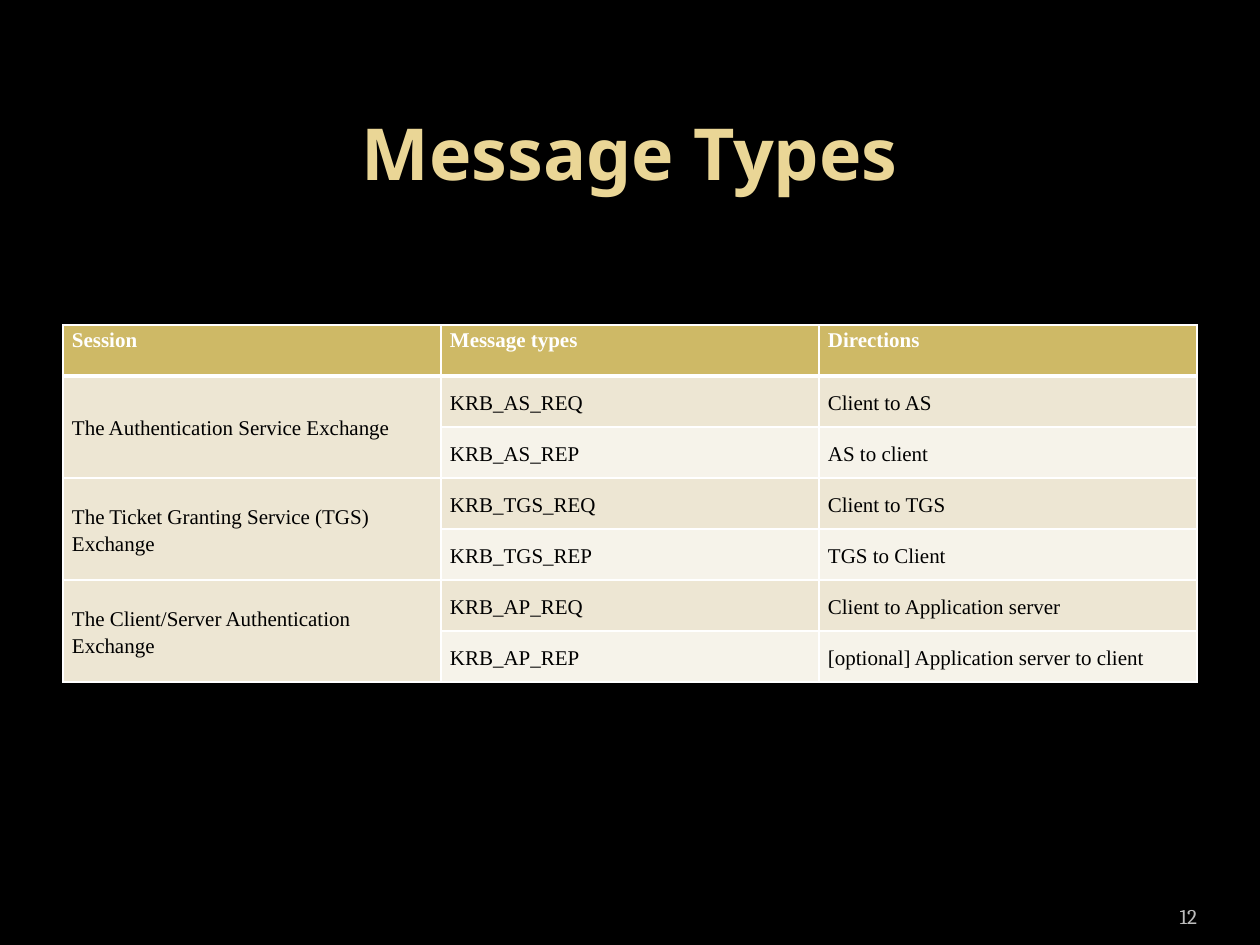
import pptx
import pptx.dml.color
import pptx.enum.text
import pptx.oxml.ns
import pptx.util
from lxml import etree

EMU_PER_PX = 914400 / 126
COLORS = {
    "background": "000000",
    "title": "EAD696",
    "header": "CEB966",
    "band_dark": "EDE6D3",
    "band_light": "F6F3EA",
    "white": "FFFFFF",
    "body": "000000",
    "number": "BDBDBD",
}
HEADERS = ["Session", "Message types", "Directions"]
SESSIONS = [
    ("The Authentication Service Exchange",
     [("KRB_AS_REQ", "Client to AS"), ("KRB_AS_REP", "AS to client")]),
    ("The Ticket Granting Service (TGS) Exchange",
     [("KRB_TGS_REQ", "Client to TGS"), ("KRB_TGS_REP", "TGS to Client")]),
    ("The Client/Server Authentication Exchange",
     [("KRB_AP_REQ", "Client to Application server"),
      ("KRB_AP_REP", "[optional] Application server to client")]),
]
ROW_HEIGHT = 51
COLUMN_WIDTH = 378
ALIGN = pptx.enum.text.PP_ALIGN
ANCHOR = pptx.enum.text.MSO_ANCHOR


def px(length):
    return pptx.util.Emu(round(length * EMU_PER_PX))


def rgb(name):
    return pptx.dml.color.RGBColor.from_string(COLORS[name])


def format_text(paragraph, font_name, size, color, bold=False, align=ALIGN.LEFT):
    paragraph.alignment = align
    for run in paragraph.runs:
        run.font.name = font_name
        run.font.size = pptx.util.Pt(size)
        run.font.bold = bold
        run.font.color.rgb = rgb(color)


def add_title(slide, text):
    title = slide.shapes.title
    title.left, title.top, title.width, title.height = px(63), px(73), px(1134), px(158)
    frame = title.text_frame
    frame.text = text
    frame.vertical_anchor = ANCHOR.MIDDLE
    format_text(frame.paragraphs[0], "Noto Sans", 41, "title", True, ALIGN.CENTER)


def set_borders(cell, widths):
    """Draw white borders; widths maps a side (L, R, T, B) to points."""
    properties = cell._tc.get_or_add_tcPr()
    for side, width in widths.items():
        line = etree.SubElement(properties, pptx.oxml.ns.qn(f"a:ln{side}"),
                                w=str(pptx.util.Pt(width)))
        fill = etree.SubElement(line, pptx.oxml.ns.qn("a:solidFill"))
        etree.SubElement(fill, pptx.oxml.ns.qn("a:srgbClr"), val=COLORS["white"])


def style_cell(cell, row):
    is_header = row == 0
    set_borders(cell, {"L": 1, "R": 1, "T": 3 if row == 1 else 1, "B": 3 if is_header else 1})
    band = "band_dark" if row % 2 else "band_light"
    cell.fill.solid()
    cell.fill.fore_color.rgb = rgb("header" if is_header else band)
    cell.margin_left = cell.margin_right = px(9)
    cell.margin_top = cell.margin_bottom = 0
    cell.vertical_anchor = ANCHOR.TOP if is_header else ANCHOR.MIDDLE
    paragraph = cell.text_frame.paragraphs[0]
    paragraph.line_spacing = 1.15
    format_text(paragraph, "Times New Roman", 12, "white" if is_header else "body", is_header)


def add_message_table(slide):
    rows = [HEADERS]
    for session, messages in SESSIONS:
        for index, message in enumerate(messages):
            rows.append(["" if index else session, *message])
    table = slide.shapes.add_table(
        len(rows), len(HEADERS), px(63), px(325),
        px(COLUMN_WIDTH * len(HEADERS)), px(ROW_HEIGHT * len(rows))).table
    for column in table.columns:
        column.width = px(COLUMN_WIDTH)
    for row, texts in enumerate(rows):
        table.rows[row].height = px(ROW_HEIGHT)
        for column, text in enumerate(texts):
            cell = table.cell(row, column)
            cell.text = text
            style_cell(cell, row)
    first_row = 1
    for _, messages in SESSIONS:
        last_row = first_row + len(messages) - 1
        table.cell(first_row, 0).merge(table.cell(last_row, 0))
        first_row = last_row + 1


def add_slide_number(slide, text):
    frame = slide.shapes.add_textbox(px(1092), px(885), px(105), px(50)).text_frame
    frame.word_wrap = True
    frame.margin_left = frame.margin_right = 0
    frame.vertical_anchor = ANCHOR.BOTTOM
    frame.text = text
    format_text(frame.paragraphs[0], "Cambria", 12, "number", align=ALIGN.RIGHT)


def main():
    presentation = pptx.Presentation()
    presentation.slide_width, presentation.slide_height = px(1260), px(945)
    slide = presentation.slides.add_slide(presentation.slide_layouts[5])
    slide.background.fill.solid()
    slide.background.fill.fore_color.rgb = rgb("background")
    add_title(slide, "Message Types")
    add_message_table(slide)
    add_slide_number(slide, "12")
    presentation.save("out.pptx")


if __name__ == "__main__":
    main()
